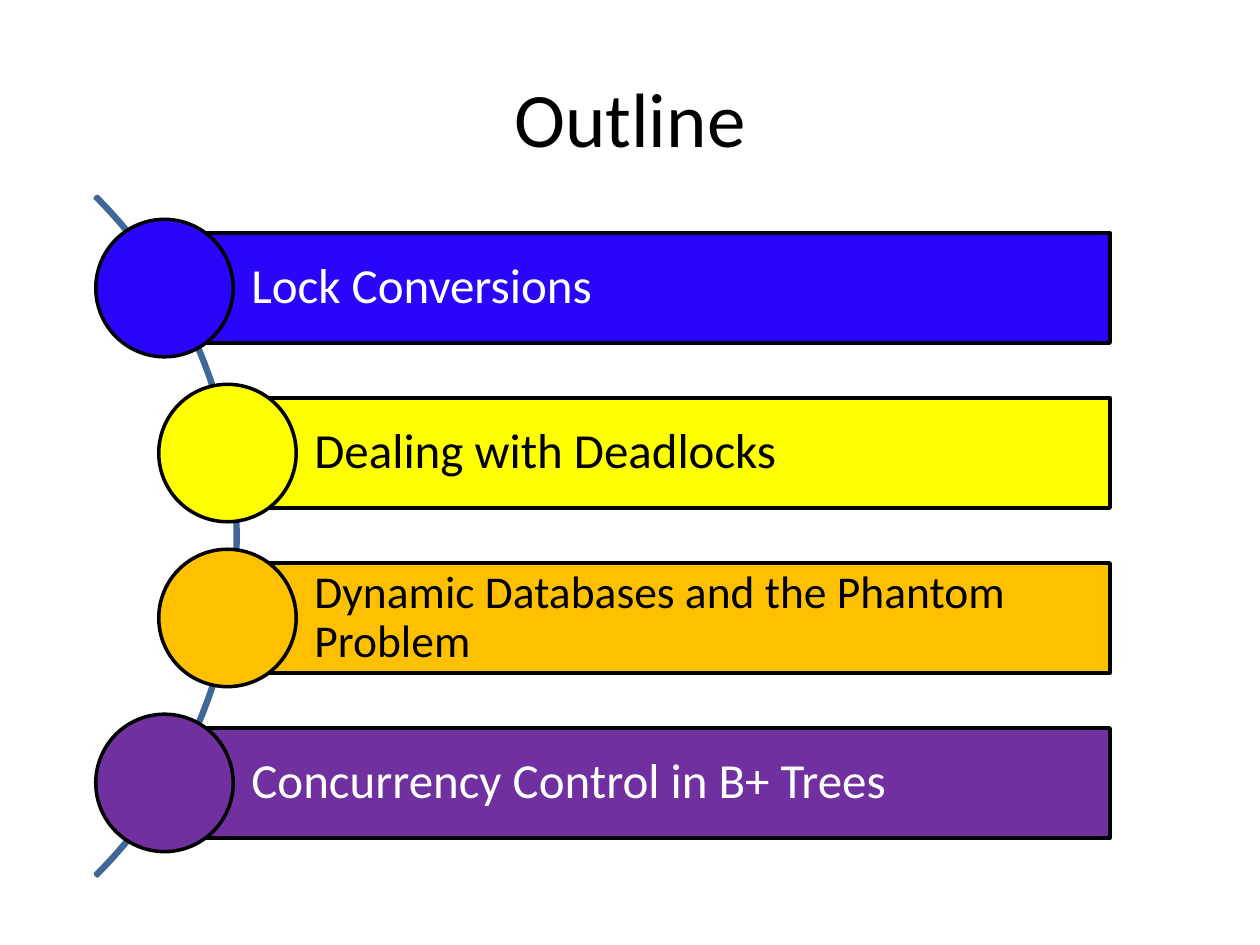
from pptx import Presentation
from pptx.dml.color import RGBColor
from pptx.enum.shapes import MSO_SHAPE
from pptx.enum.text import MSO_ANCHOR, PP_ALIGN
from pptx.util import Inches, Pt

ARC, BAR, CIRCLE = MSO_SHAPE.BLOCK_ARC, MSO_SHAPE.RECTANGLE, MSO_SHAPE.OVAL
MIDDLE = MSO_ANCHOR.MIDDLE
LEFT, CENTER = PP_ALIGN.LEFT, PP_ALIGN.CENTER

BLACK = RGBColor(0x00, 0x00, 0x00)
WHITE = RGBColor(0xFF, 0xFF, 0xFF)
BLUE = RGBColor(0x29, 0x06, 0xFA)
YELLOW = RGBColor(0xFF, 0xFF, 0x00)
ORANGE = RGBColor(0xFF, 0xC0, 0x00)
PURPLE = RGBColor(0x70, 0x30, 0xA0)
STEEL = RGBColor(0x3F, 0x67, 0x97)

TOPICS = [
    ("Lock Conversions", BLUE, WHITE, 28, 0),
    ("Dealing with Deadlocks", YELLOW, BLACK, 28, 0.5),
    ("Dynamic Databases and the Phantom Problem", ORANGE, BLACK, 26, 0.5),
    ("Concurrency Control in B+ Trees", PURPLE, WHITE, 28, 0),
]


def add_outlined(s, kind, x, y, w, h, fill, line):
    sp = s.shapes.add_shape(kind, Inches(x), Inches(y), Inches(w), Inches(h))
    sp.shadow.inherit = False
    if fill is None:
        sp.fill.background()
    else:
        sp.fill.solid()
        sp.fill.fore_color.rgb = fill
    sp.line.color.rgb = line
    sp.line.width = Pt(2)
    return sp


def set_text(sp, text, size, color, align):
    tf = sp.text_frame
    tf.word_wrap = True
    tf.vertical_anchor = MIDDLE
    p = tf.paragraphs[0]
    p.text = text
    p.alignment = align
    p.font.name = "Calibri"
    p.font.size = Pt(size)
    p.font.color.rgb = color
    return tf


def add_title(s, x, y, w, h):
    sp = s.shapes.add_textbox(Inches(x), Inches(y), Inches(w), Inches(h))
    set_text(sp, "Outline", 44, BLACK, CENTER)


def add_arc(s, x, y, size):
    sp = add_outlined(s, ARC, x, y, size, size, None, STEEL)
    for i, value in enumerate((189, 27, 0.003)):
        sp.adjustments[i] = value


def add_topic(s, x, y, w, h, text, fill, color, size):
    diameter = 1.25 * h
    radius = diameter / 2
    bar = add_outlined(s, BAR, x + radius, y, w - radius, h, fill, BLACK)
    tf = set_text(bar, text, size, color, LEFT)
    tf.paragraphs[0].line_spacing = 0.9
    tf.margin_left = Inches(0.69)
    tf.margin_top = tf.margin_right = tf.margin_bottom = Inches(size / 360)
    add_outlined(s, CIRCLE, x, y - h / 8, diameter, diameter, fill, BLACK)


def add_topics(s, x, y, w, h):
    bar_h = h / (1 + 1.5 * (len(TOPICS) - 1))
    for i, (text, fill, color, size, indent) in enumerate(TOPICS):
        top = y + 1.5 * bar_h * i
        add_topic(s, x + indent, top, w - indent, bar_h, text, fill, color, size)


def main():
    prs = Presentation()
    prs.slide_width, prs.slide_height = Inches(10), Inches(7.5)
    s = prs.slides.add_slide(prs.slide_layouts[6])
    add_title(s, 0.5, 0.3, 9, 1.25)
    add_arc(s, -5.74, 0.44, 7.63)
    add_topics(s, 0.76, 1.85, 8.05, 4.8)
    prs.save("out.pptx")


if __name__ == "__main__":
    main()
